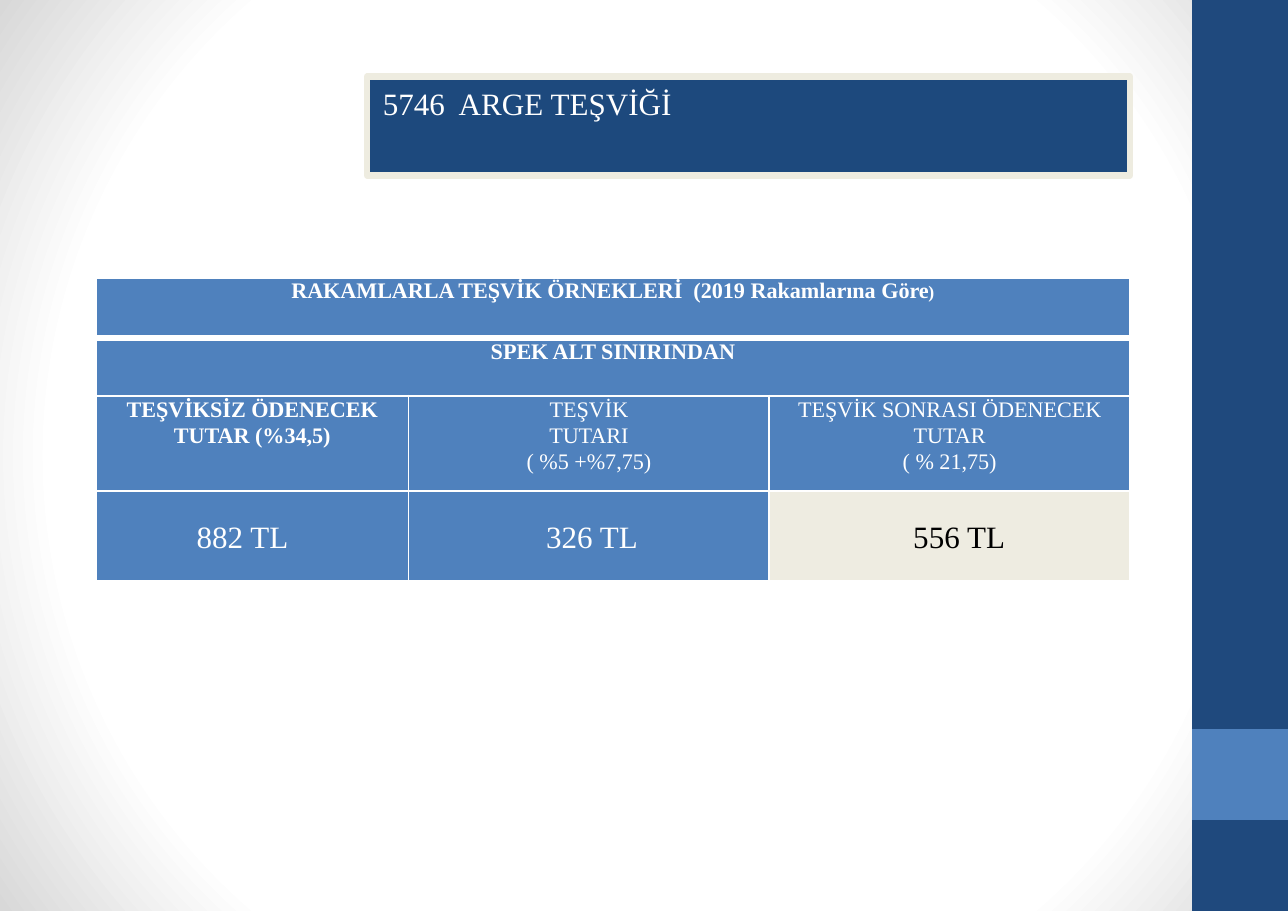
"""Build the slide on the 5746 R&D incentive with its table of amounts."""
from dataclasses import dataclass

from pptx import Presentation
from pptx.dml.color import RGBColor
from pptx.enum.shapes import MSO_SHAPE
from pptx.enum.text import MSO_ANCHOR, MSO_AUTO_SIZE, PP_ALIGN
from pptx.oxml import parse_xml
from pptx.oxml.ns import nsdecls, qn
from pptx.shapes.autoshape import Shape
from pptx.slide import Slide
from pptx.table import Table, _Cell
from pptx.text.text import TextFrame, _Paragraph
from pptx.util import Inches, Pt

NAVY = RGBColor(0x1F, 0x49, 0x7D)
TITLE_NAVY = RGBColor(0x1D, 0x49, 0x7D)
BLUE = RGBColor(0x4F, 0x81, 0xBD)
CREAM = RGBColor(0xEE, 0xEC, 0xE1)
TITLE_CREAM = RGBColor(0xEE, 0xEC, 0xE0)
WHITE = RGBColor(0xFF, 0xFF, 0xFF)
GRAY = RGBColor(0xD8, 0xD8, 0xD8)
BLACK = RGBColor(0, 0, 0)

FONT = "Times New Roman"
SLIDE_WIDTH, SLIDE_HEIGHT = 8.07, 5.71
COLUMN_WIDTHS = (1.96, 2.26, 2.26)
ROW_HEIGHTS = (0.38, 0.36, 0.6, 0.56)
BACKGROUND_STOPS = ((0, WHITE), (75, WHITE), (100, GRAY))


@dataclass(frozen=True)
class Panel:
    left: float
    top: float
    width: float
    height: float
    color: RGBColor


@dataclass(frozen=True)
class Span:
    text: str
    size: float = 10
    bold: bool = False
    color: RGBColor = WHITE


@dataclass(frozen=True)
class Heading:
    row: int
    column: int
    lines: tuple[tuple[Span, ...], ...]


@dataclass(frozen=True)
class Amount:
    left: float
    span: Span


SIDEBAR = (
    Panel(7.47, 0, 0.6, SLIDE_HEIGHT, NAVY),
    Panel(7.47, 4.57, 0.6, 0.57, BLUE),
)
TITLE_PANEL = Panel(2.3, 0.48, 4.78, 0.62, TITLE_NAVY)
TITLE = Span("5746  ARGE TEŞVİĞİ", 14)
HEADINGS = (
    Heading(0, 0, ((Span("RAKAMLARLA TEŞVİK ÖRNEKLERİ  (2019 Rakamlarına Göre", bold=True),
                    Span(")", 8, True)),)),
    Heading(1, 0, ((Span("SPEK ALT SINIRINDAN", bold=True),),)),
    Heading(2, 0, ((Span("TEŞVİKSİZ ÖDENECEK TUTAR (%34,5)", bold=True),),)),
    Heading(2, 1, ((Span("TEŞVİK"),), (Span("TUTARI"),), (Span("( %5 +%7,75)"),))),
    Heading(2, 2, ((Span("TEŞVİK SONRASI ÖDENECEK TUTAR"),), (Span("( % 21,75)"),))),
)
AMOUNTS = (
    Amount(1.13, Span("882 TL", 14)),
    Amount(3.32, Span("326 TL", 14)),
    Amount(5.62, Span("556 TL", 14, color=BLACK)),
)


def set_background(page: Slide) -> None:
    """Fill the page with a gradient that darkens away from its middle."""
    page.background.fill.gradient()
    gradient = page.element.find(".//" + qn("a:gradFill"))
    stops = "".join(
        f'<a:gs pos="{position * 1000}"><a:srgbClr val="{color}"/></a:gs>'
        for position, color in BACKGROUND_STOPS
    )
    for child in list(gradient):
        gradient.remove(child)
    gradient.append(parse_xml(f'<a:gsLst {nsdecls("a")}>{stops}</a:gsLst>'))
    gradient.append(parse_xml(
        f'<a:path {nsdecls("a")} path="circle">'
        '<a:fillToRect l="50000" t="50000" r="50000" b="50000"/></a:path>'
    ))


def add_panel(page: Slide, panel: Panel) -> Shape:
    """Add a plain rectangle without outline or shadow."""
    lengths = map(Inches, (panel.left, panel.top, panel.width, panel.height))
    box = page.shapes.add_shape(MSO_SHAPE.RECTANGLE, *lengths)
    box.shadow.inherit = False
    box.fill.solid()
    box.fill.fore_color.rgb = panel.color
    box.line.fill.background()
    return box


def write_spans(para: _Paragraph, spans: tuple[Span, ...], alignment: PP_ALIGN) -> None:
    """Write formatted runs into a paragraph."""
    para.alignment = alignment
    for span in spans:
        run = para.add_run()
        run.text = span.text
        formats = {"name": FONT, "size": Pt(span.size), "bold": span.bold}
        for name, value in formats.items():
            setattr(run.font, name, value)
        run.font.color.rgb = span.color


def write_centered(frame: TextFrame, lines: tuple[tuple[Span, ...], ...]) -> None:
    """Write centred lines, one paragraph for each."""
    for index, spans in enumerate(lines):
        para = frame.add_paragraph() if index else frame.paragraphs[0]
        para.line_spacing = 1.07
        write_spans(para, spans, PP_ALIGN.CENTER)


def add_title(page: Slide) -> None:
    """Add the framed title."""
    box = add_panel(page, TITLE_PANEL)
    box.line.color.rgb = TITLE_CREAM
    box.line.width = Pt(3)
    frame = box.text_frame
    frame.vertical_anchor = MSO_ANCHOR.TOP
    write_spans(frame.paragraphs[0], (TITLE,), PP_ALIGN.LEFT)


def format_cell(cell: _Cell, row: int, column: int) -> None:
    """Set the fill, margins and white borders of a cell."""
    last = (row, column) == (len(ROW_HEIGHTS) - 1, len(COLUMN_WIDTHS) - 1)
    cell.fill.solid()
    cell.fill.fore_color.rgb = CREAM if last else BLUE
    margins = {"margin_left": 0.04, "margin_right": 0.04, "margin_top": 0, "margin_bottom": 0}
    for name, value in margins.items():
        setattr(cell, name, Inches(value))
    widths = {"L": 1, "R": 1, "T": 3 if row == 1 else 1, "B": 3 if row == 0 else 1}
    properties = cell._tc.get_or_add_tcPr()
    for index, (side, width) in enumerate(widths.items()):
        properties.insert(index, parse_xml(
            f'<a:ln{side} {nsdecls("a")} w="{Pt(width)}"><a:solidFill>'
            f'<a:srgbClr val="{WHITE}"/></a:solidFill></a:ln{side}>'
        ))


def add_incentive_table(page: Slide) -> Table:
    """Add the table of incentive headings."""
    size = (sum(COLUMN_WIDTHS), sum(ROW_HEIGHTS))
    table = page.shapes.add_table(
        len(ROW_HEIGHTS), len(COLUMN_WIDTHS), *map(Inches, (0.6, 1.74, *size))
    ).table
    table.horz_banding = False
    for column, width in zip(table.columns, COLUMN_WIDTHS):
        column.width = Inches(width)
    for row_index, height in enumerate(ROW_HEIGHTS):
        table.rows[row_index].height = Inches(height)
        for column_index in range(len(COLUMN_WIDTHS)):
            format_cell(table.cell(row_index, column_index), row_index, column_index)
    for row_index in range(2):
        table.cell(row_index, 0).merge(table.cell(row_index, len(COLUMN_WIDTHS) - 1))
    for heading in HEADINGS:
        write_centered(table.cell(heading.row, heading.column).text_frame, heading.lines)
    return table


def add_amount(page: Slide, amount: Amount) -> None:
    """Add an amount over the bottom row of the table."""
    box = page.shapes.add_textbox(*map(Inches, (amount.left, 3.18, 0.78, 0.35)))
    box.text_frame.word_wrap = False
    box.text_frame.auto_size = MSO_AUTO_SIZE.SHAPE_TO_FIT_TEXT
    write_centered(box.text_frame, ((amount.span,),))


def main() -> None:
    """Build and save the deck."""
    deck = Presentation()
    deck.slide_width = Inches(SLIDE_WIDTH)
    deck.slide_height = Inches(SLIDE_HEIGHT)
    page = deck.slides.add_slide(deck.slide_layouts[6])
    set_background(page)
    for panel in SIDEBAR:
        add_panel(page, panel)
    add_title(page)
    add_incentive_table(page)
    for amount in AMOUNTS:
        add_amount(page, amount)
    deck.save("out.pptx")


if __name__ == "__main__":
    main()
